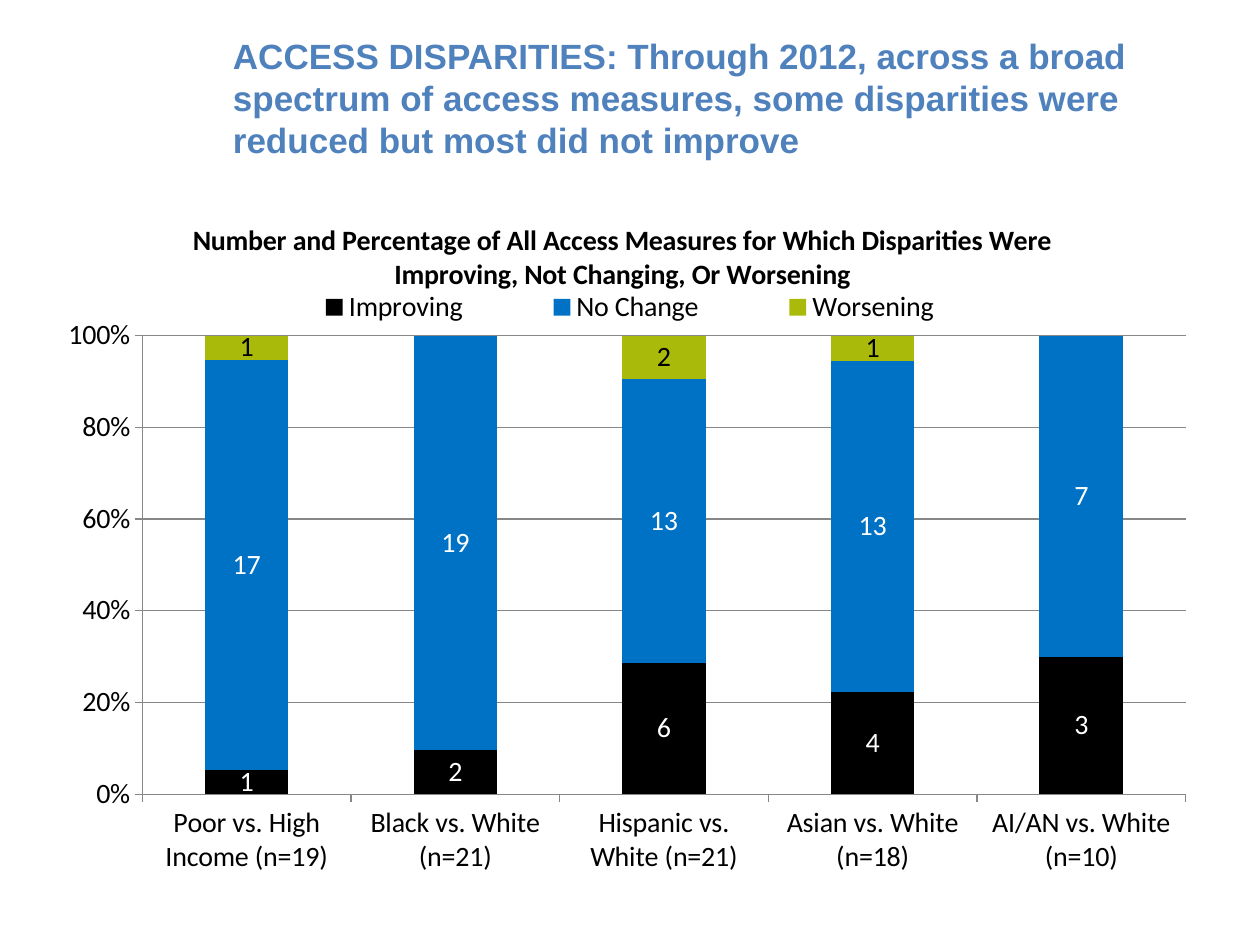
from dataclasses import dataclass

from lxml import etree
from pptx import Presentation
from pptx.chart.data import CategoryChartData
from pptx.dml.color import RGBColor
from pptx.enum.chart import XL_CHART_TYPE, XL_LEGEND_POSITION, XL_TICK_MARK
from pptx.enum.text import MSO_ANCHOR
from pptx.oxml.ns import qn
from pptx.util import Emu, Pt

STACKED = XL_CHART_TYPE.COLUMN_STACKED_100
LEGEND_TOP = XL_LEGEND_POSITION.TOP
TICK_OUT = XL_TICK_MARK.OUTSIDE
MIDDLE = MSO_ANCHOR.MIDDLE
EMU_PER_PX = 9144  # 100 px to the inch


@dataclass(frozen=True)
class Theme:
    heading: str = "4F81BD"
    ink: str = "000000"
    white: str = "FFFFFF"
    grid: str = "878787"
    heading_font: str = "Arial"
    chart_font: str = "Calibri"
    heading_size: int = 20
    chart_size: int = 16


THEME = Theme()
HEADING = ("ACCESS DISPARITIES: Through 2012, across a broad spectrum of access "
           "measures, some disparities were reduced but most did not improve")
CHART_TITLE = ("Number and Percentage of All Access Measures for Which Disparities "
               "Were Improving, Not Changing, Or Worsening")
CATEGORIES = ["Poor vs. High Income (n=19)", "Black vs. White (n=21)",
              "Hispanic vs. White (n=21)", "Asian vs. White (n=18)",
              "AI/AN vs. White (n=10)"]
# name, values, fill colour, label colour
SERIES = [
    ("Improving", (1, 2, 6, 4, 3), "000000", THEME.white),
    ("No Change", (17, 19, 13, 13, 7), "0072C6", THEME.white),
    ("Worsening", (1, None, 2, 1, None), "AABA0A", THEME.ink),
]


def px(length):
    return Emu(length * EMU_PER_PX)


def style_font(font, name, size, colour, bold=False):
    font.name = name
    font.size = Pt(size)
    font.bold = bold
    font.color.rgb = RGBColor.from_string(colour)


def style_chart_font(font, colour=THEME.ink, bold=False):
    style_font(font, THEME.chart_font, THEME.chart_size, colour, bold)


def set_layout(parent, index, inner=False, **fractions):
    """Place a chart part by fractions of the chart's width and height."""
    for old in parent.findall(qn("c:layout")):
        parent.remove(old)
    layout = etree.Element(qn("c:layout"))
    manual = etree.SubElement(layout, qn("c:manualLayout"))
    settings = {"layoutTarget": "inner"} if inner else {}
    settings.update(xMode="edge", yMode="edge", **fractions)
    for tag, value in settings.items():
        etree.SubElement(manual, qn(f"c:{tag}")).set("val", str(value))
    parent.insert(index, layout)


def add_heading(page, left, top, width, height):
    box = page.shapes.add_textbox(px(left), px(top), px(width), px(height))
    frame = box.text_frame
    frame.word_wrap = True
    frame.vertical_anchor = MIDDLE
    frame.text = HEADING
    style_font(frame.paragraphs[0].runs[0].font, THEME.heading_font,
               THEME.heading_size, THEME.heading, bold=True)


def style_axes(chart):
    grid_colour = RGBColor.from_string(THEME.grid)
    value_axis = chart.value_axis
    value_axis.major_unit = 0.2
    value_axis.has_major_gridlines = True
    value_axis.tick_labels.number_format = "0%"
    value_axis.tick_labels.number_format_is_linked = False
    for axis in (chart.category_axis, value_axis):
        axis.major_tick_mark = TICK_OUT
        style_chart_font(axis.tick_labels.font)
    for part in (chart.category_axis, value_axis, value_axis.major_gridlines):
        part.format.line.color.rgb = grid_colour
        part.format.line.width = Pt(0.75)


def style_series(plot):
    for series, (_, _, fill, label_colour) in zip(plot.series, SERIES):
        series.format.fill.solid()
        series.format.fill.fore_color.rgb = RGBColor.from_string(fill)
        series.data_labels.show_value = True
        style_chart_font(series.data_labels.font, label_colour)


def add_disparity_chart(page, left, top, width, height):
    data = CategoryChartData()
    data.categories = CATEGORIES
    for name, values, _, _ in SERIES:
        data.add_series(name, values)
    chart = page.shapes.add_chart(STACKED, px(left), px(top), px(width),
                                  px(height), data).chart
    style_chart_font(chart.font)

    title = chart.chart_title
    title.text_frame.text = CHART_TITLE
    style_chart_font(title.text_frame.paragraphs[0].runs[0].font, bold=True)
    title.include_in_layout = False
    set_layout(title._element, 1, x=0.11, y=0.02)

    chart.has_legend = True
    legend = chart.legend
    legend.position = LEGEND_TOP
    legend.include_in_layout = False
    style_chart_font(legend.font)
    set_layout(legend._element, 1, x=0.16, y=0.12, w=0.68, h=0.06)

    plot = chart.plots[0]
    plot.gap_width = 150
    plot.overlap = 100
    plot.vary_by_categories = False
    style_axes(chart)
    style_series(plot)
    set_layout(plot._element.getparent(), 0, inner=True,
               x=0.07, y=0.19, w=0.92, h=0.65)


def main():
    deck = Presentation()
    deck.slide_width, deck.slide_height = px(1000), px(750)
    page = deck.slides.add_slide(deck.slide_layouts[6])
    add_heading(page, 175, 30, 775, 95)
    add_disparity_chart(page, 50, 160, 900, 560)
    deck.save("out.pptx")


if __name__ == "__main__":
    main()
